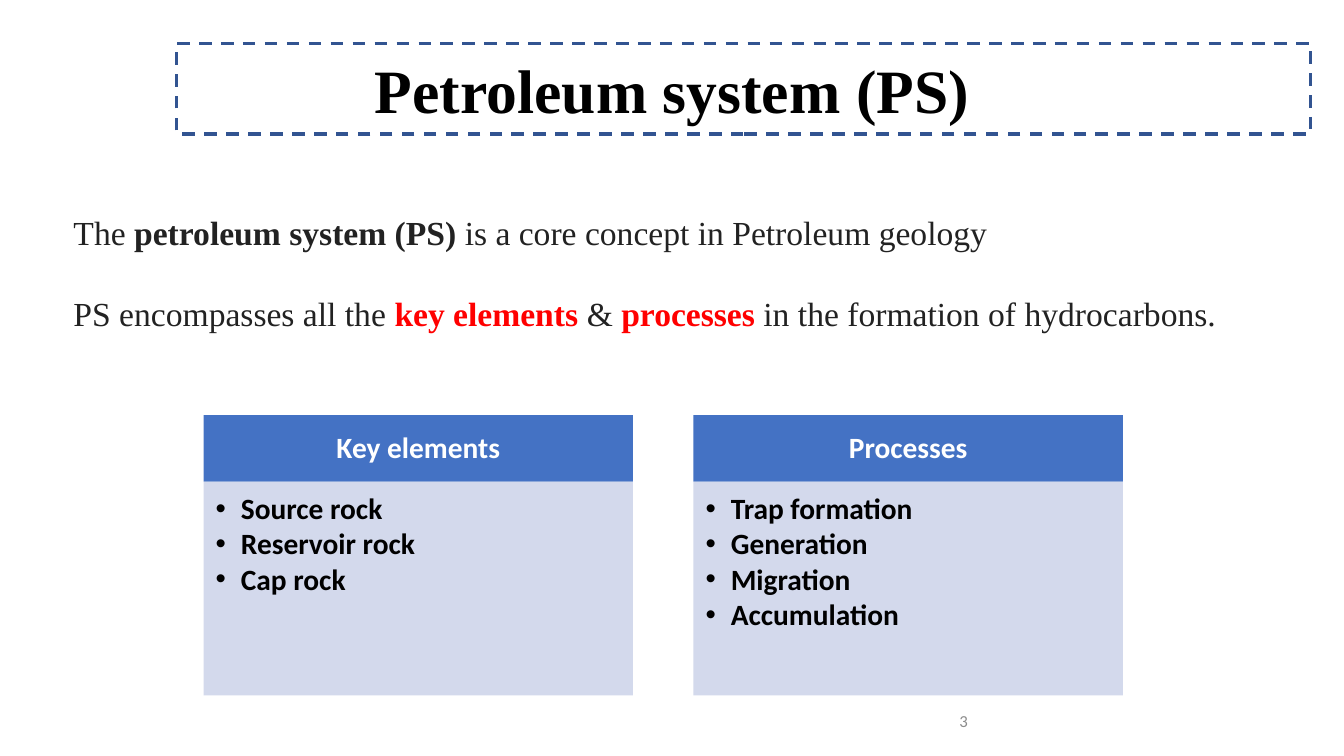
from dataclasses import dataclass

from lxml.etree import SubElement
from pptx import Presentation
from pptx.dml.color import RGBColor as Color
from pptx.enum.dml import MSO_LINE_DASH_STYLE as Dash
from pptx.enum.shapes import MSO_SHAPE as Shape
from pptx.enum.text import MSO_ANCHOR as Anchor, PP_ALIGN as Align
from pptx.oxml.ns import qn
from pptx.util import Emu, Inches, Pt


@dataclass(frozen=True)
class Theme:
    serif: str = "Times New Roman"
    sans: str = "Calibri"
    white: str = "FFFFFF"
    black: str = "000000"
    ink: str = "222222"
    red: str = "FF0000"
    gray: str = "8C8C8C"
    border: str = "325491"
    header: str = "4472C4"
    body: str = "CFD5EA"
    title_size: float = 44
    intro_size: float = 24
    card_size: float = 21
    number_size: float = 12


theme = Theme()
presentation = Presentation()
presentation.slide_width = Inches(13.333)
presentation.slide_height = Inches(7.5)
slide = presentation.slides.add_slide(presentation.slide_layouts[6])


def add_box(left, top, width, height, fill=None, anchor=Anchor.MIDDLE, insets=(0.1, 0.05, 0.1, 0.05)):
    """Add a rectangle, or a text box if there is no fill; place it in percent of the slide."""
    across, down = presentation.slide_width / 100, presentation.slide_height / 100
    place = [Emu(round(length)) for length in (left * across, top * down, width * across, height * down)]
    if fill:
        shape = slide.shapes.add_shape(Shape.RECTANGLE, *place)
        shape.shadow.inherit = False
        shape.fill.solid()
        shape.fill.fore_color.rgb = Color.from_string(fill)
        shape.line.fill.background()
    else:
        shape = slide.shapes.add_textbox(*place)
    frame = shape.text_frame
    frame.word_wrap = True
    frame.vertical_anchor = anchor
    frame.margin_left, frame.margin_top, frame.margin_right, frame.margin_bottom = map(Inches, insets)
    return shape


def add_run(paragraph, text, font, size, color, bold=False):
    run = paragraph.add_run()
    run.text = text
    run.font.name = font
    run.font.size = Pt(size)
    run.font.bold = bold
    run.font.color.rgb = Color.from_string(color)


# Title; the wide right inset sets the words left of centre
title = add_box(13.13, 5.73, 84.38, 12, theme.white, insets=(0.1, 0.05, 1.51, 0.05))
title.line.color.rgb = Color.from_string(theme.border)
title.line.width = Pt(2.25)
title.line.dash_style = Dash.DASH
paragraph = title.text_frame.paragraphs[0]
paragraph.alignment = Align.CENTER
add_run(paragraph, "Petroleum system (PS)", theme.serif, theme.title_size, theme.black, True)

# Introduction: text, colour, bold
sentences = [
    [
        ("The ", theme.ink, False),
        ("petroleum system (PS)", theme.ink, True),
        (" is a core concept in Petroleum geology", theme.ink, False),
    ],
    [
        ("PS encompasses all the ", theme.ink, False),
        ("key elements ", theme.red, True),
        ("& ", theme.ink, False),
        ("processes", theme.red, True),
        (" in the formation of hydrocarbons.", theme.ink, False),
    ],
]
intro = add_box(4.73, 27.33, 91.8, 21.6, anchor=Anchor.TOP).text_frame
for index, sentence in enumerate(sentences):
    paragraph = intro.add_paragraph() if index else intro.paragraphs[0]
    paragraph.space_before = Pt(29.3 * index)
    for text, color, bold in sentence:
        add_run(paragraph, text, theme.serif, theme.intro_size, color, bold)

# Two cards
cards = {
    "Key elements": ["Source rock", "Reservoir rock", "Cap rock"],
    "Processes": ["Trap formation", "Generation", "Migration", "Accumulation"],
}
first_left, pitch, card_width = 15.15, 36.45, 31.95
card_top, header_height, body_height = 54.93, 8.8, 28.27
for column, (heading, items) in enumerate(cards.items()):
    left = first_left + column * pitch
    header = add_box(left, card_top, card_width, header_height, theme.header, insets=(0.16, 0.09, 0.16, 0.09))
    paragraph = header.text_frame.paragraphs[0]
    paragraph.alignment = Align.CENTER
    paragraph.line_spacing = 0.9
    add_run(paragraph, heading, theme.sans, theme.card_size, theme.white, True)

    body = add_box(left, card_top + header_height, card_width, body_height, theme.body,
                   Anchor.TOP, (0.12, 0.12, 0.16, 0.18))
    fill_color = body.fill._xPr.find(qn("a:solidFill"))[0]
    SubElement(fill_color, qn("a:alpha"), val="90000")
    for index, item in enumerate(items):
        paragraph = body.text_frame.add_paragraph() if index else body.text_frame.paragraphs[0]
        paragraph.alignment = Align.LEFT
        paragraph.line_spacing = 0.9
        paragraph.space_after = Pt(2.6)
        properties = paragraph._p.get_or_add_pPr()
        properties.set("marL", str(Inches(0.25)))
        properties.set("indent", str(-Inches(0.25)))
        SubElement(properties, qn("a:buFont"), typeface="Arial")
        SubElement(properties, qn("a:buChar"), char="•")
        add_run(paragraph, item, theme.sans, theme.card_size, theme.black, True)

# Slide number
number = add_box(70.65, 92.67, 22.5, 5.33)
add_run(number.text_frame.paragraphs[0], "3", theme.sans, theme.number_size, theme.gray)

presentation.save("out.pptx")
